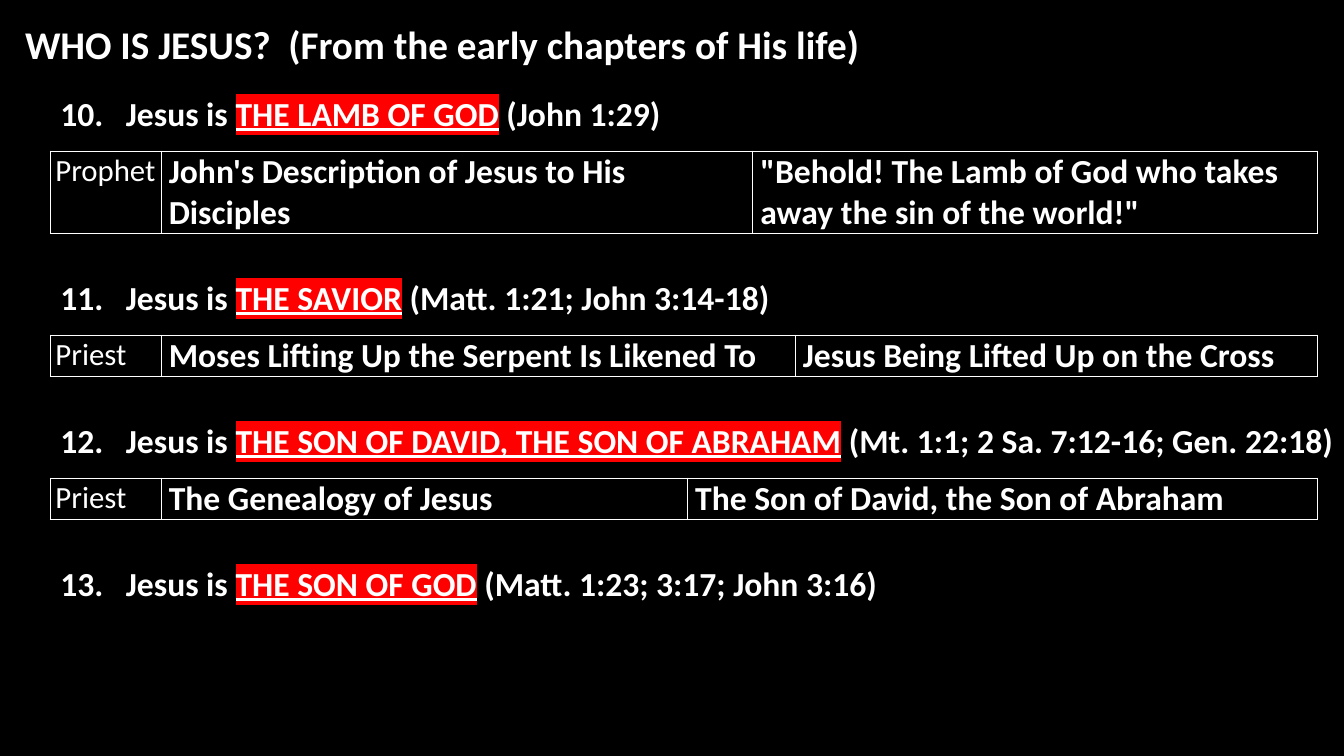
"""Build the slide listing who Jesus is, with a reference table under each title."""
from dataclasses import dataclass
from typing import Optional

from lxml.etree import SubElement
from pptx import Presentation
from pptx.dml.color import RGBColor
from pptx.enum.text import MSO_AUTO_SIZE
from pptx.oxml.ns import qn
from pptx.slide import Slide
from pptx.table import _Cell
from pptx.text.text import Font, _Paragraph, _Run
from pptx.util import Pt

BLACK = RGBColor(0x00, 0x00, 0x00)
WHITE = RGBColor(0xFF, 0xFF, 0xFF)
RED = RGBColor(0xFF, 0x00, 0x00)

CONTENT_LEFT = 36
HEADING_WIDTH = 924
HEADING_HEIGHT = 36.35
NUMBER_INDENT = 46.8
TABLE_OFFSET = 45.36
TABLE_WIDTH = 905
OFFICE_WIDTH = 79.2
LINE_HEIGHT = 29.3
GAP_AFTER_TABLE = 27.5
FIRST_HEADING_TOP = 62.64


@dataclass(frozen=True)
class Reference:
    office: str
    description: str
    fulfilment: str
    description_width: float
    lines: int = 1


@dataclass(frozen=True)
class Statement:
    number: int
    title: str
    verses: str
    reference: Optional[Reference] = None


STATEMENTS = [
    Statement(10, "THE LAMB OF GOD", "(John 1:29)", Reference(
        "Prophet", "John's Description of Jesus to His Disciples",
        '"Behold! The Lamb of God who takes away the sin of the world!"', 422.6, 2)),
    Statement(11, "THE SAVIOR", "(Matt. 1:21; John 3:14-18)", Reference(
        "Priest", "Moses Lifting Up the Serpent Is Likened To",
        "Jesus Being Lifted Up on the Cross", 452.9)),
    Statement(12, "THE SON OF DAVID, THE SON OF ABRAHAM",
              "(Mt. 1:1; 2 Sa. 7:12-16; Gen. 22:18)", Reference(
                  "Priest", "The Genealogy of Jesus",
                  "The Son of David, the Son of Abraham", 376)),
    Statement(13, "THE SON OF GOD", "(Matt. 1:23; 3:17; John 3:16)"),
]


def style_font(font: Font, size: float, bold: bool) -> None:
    font.name = "Calibri"
    font.size = Pt(size)
    font.bold = bold
    font.color.rgb = WHITE


def add_text_line(slide: Slide, left: float, top: float, width: float,
                  height: float, size: float) -> _Paragraph:
    box = slide.shapes.add_textbox(Pt(left), Pt(top), Pt(width), Pt(height))
    box.text_frame.word_wrap = True
    box.text_frame.auto_size = MSO_AUTO_SIZE.SHAPE_TO_FIT_TEXT
    paragraph = box.text_frame.paragraphs[0]
    style_font(paragraph.font, size, True)
    return paragraph


def highlight(run: _Run) -> None:
    run.font.underline = True
    mark = SubElement(run.font._element, qn("a:highlight"))
    SubElement(mark, qn("a:srgbClr"), val=str(RED))


def add_heading(slide: Slide, statement: Statement, top: float) -> None:
    paragraph = add_text_line(slide, CONTENT_LEFT, top, HEADING_WIDTH, HEADING_HEIGHT, 24)
    properties = paragraph._p.get_or_add_pPr()
    properties.set("marL", str(Pt(NUMBER_INDENT)))
    properties.set("indent", str(-Pt(NUMBER_INDENT)))
    paragraph.add_run().text = f"{statement.number}.\tJesus is "
    title = paragraph.add_run()
    title.text = statement.title
    highlight(title)
    paragraph.add_run().text = f" {statement.verses}"


def add_borders(cell: _Cell) -> None:
    properties = cell._tc.get_or_add_tcPr()
    for side in ("lnL", "lnR", "lnT", "lnB"):
        line = SubElement(properties, qn(f"a:{side}"), w=str(Pt(1)))
        fill = SubElement(line, qn("a:solidFill"))
        SubElement(fill, qn("a:srgbClr"), val=str(WHITE))


def fill_cell(cell: _Cell, text: str, is_office: bool) -> None:
    add_borders(cell)
    cell.fill.solid()
    cell.fill.fore_color.rgb = BLACK
    cell.margin_left = Pt(3.6 if is_office else 5.4)
    cell.margin_right = Pt(0.72 if is_office else 5.4)
    cell.margin_top = Pt(0.72 if is_office else 0)
    cell.margin_bottom = Pt(0)
    paragraph = cell.text_frame.paragraphs[0]
    style_font(paragraph.font, 22 if is_office else 24, not is_office)
    paragraph.add_run().text = text


def add_reference(slide: Slide, reference: Reference, top: float) -> None:
    frame = slide.shapes.add_table(1, 3, Pt(CONTENT_LEFT), Pt(top), Pt(TABLE_WIDTH),
                                   Pt(LINE_HEIGHT * reference.lines))
    table = frame.table
    table.first_row = False
    table.horz_banding = False
    widths = (OFFICE_WIDTH, reference.description_width,
              TABLE_WIDTH - OFFICE_WIDTH - reference.description_width)
    texts = (reference.office, reference.description, reference.fulfilment)
    for index, (width, text) in enumerate(zip(widths, texts)):
        table.columns[index].width = Pt(width)
        fill_cell(table.cell(0, index), text, index == 0)


def main() -> None:
    presentation = Presentation()
    presentation.slide_width = Pt(960)
    presentation.slide_height = Pt(540)
    slide = presentation.slides.add_slide(presentation.slide_layouts[6])
    slide.background.fill.solid()
    slide.background.fill.fore_color.rgb = BLACK

    title = add_text_line(slide, 10.8, 10.8, 839.5, 41.2, 28)
    title.add_run().text = "WHO IS JESUS?  (From the early chapters of His life)"

    top = FIRST_HEADING_TOP
    for statement in STATEMENTS:
        add_heading(slide, statement, top)
        if statement.reference:
            add_reference(slide, statement.reference, top + TABLE_OFFSET)
            top += TABLE_OFFSET + LINE_HEIGHT * statement.reference.lines + GAP_AFTER_TABLE

    presentation.save("out.pptx")


if __name__ == "__main__":
    main()
